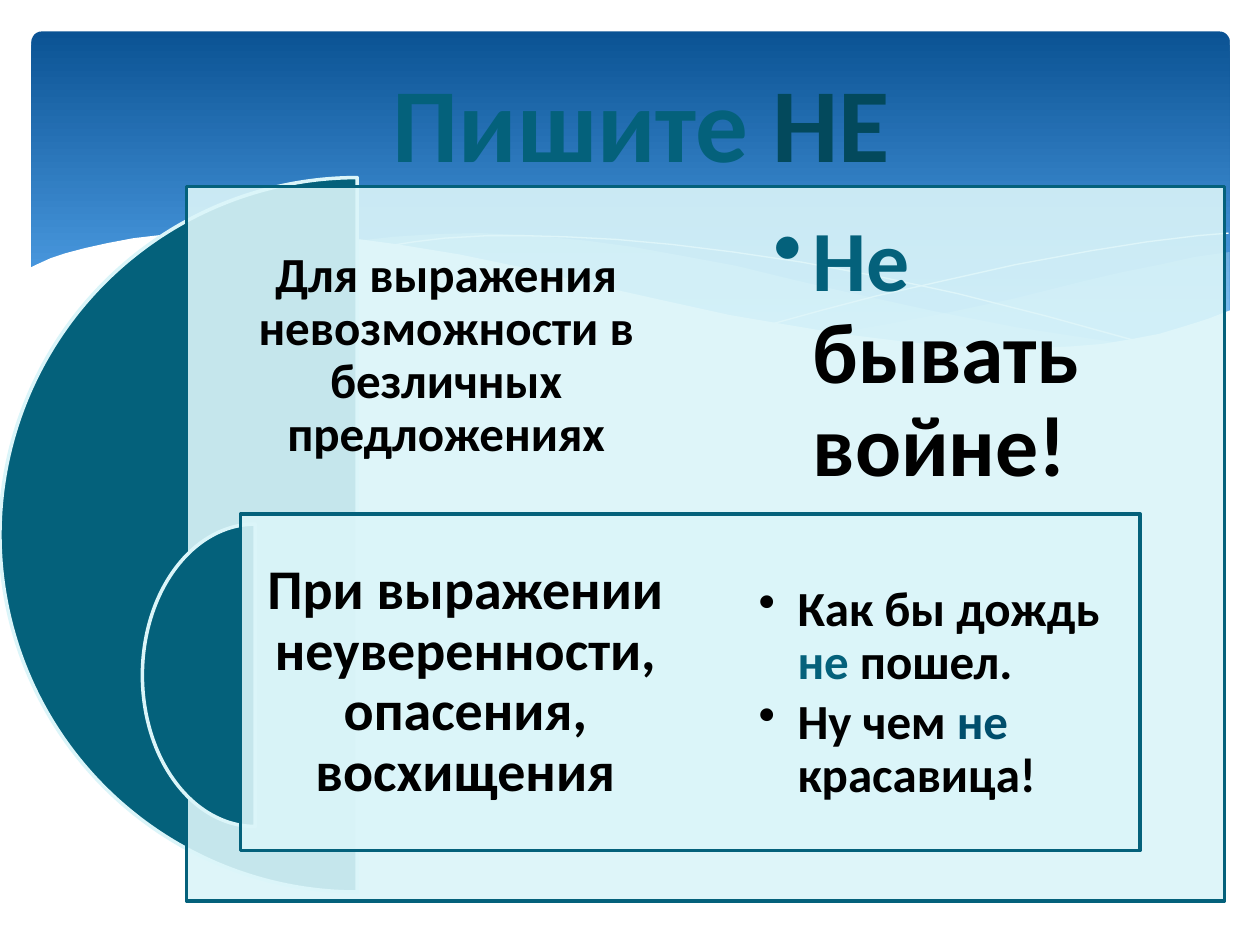
from dataclasses import dataclass
from typing import Optional

from lxml import etree
from pptx import Presentation
from pptx.dml.color import RGBColor
from pptx.enum.shapes import MSO_SHAPE
from pptx.enum.text import MSO_ANCHOR, MSO_AUTO_SIZE, PP_ALIGN
from pptx.oxml.ns import qn
from pptx.util import Inches, Pt

ROUND, RECT, PIE = MSO_SHAPE.ROUNDED_RECTANGLE, MSO_SHAPE.RECTANGLE, MSO_SHAPE.PIE
MIDDLE, NO_FIT = MSO_ANCHOR.MIDDLE, MSO_AUTO_SIZE.NONE
CENTER, LEFT = PP_ALIGN.CENTER, PP_ALIGN.LEFT
TEAL, ICE, WHITE, BLACK = "04617B", "DBF5F9", "FFFFFF", "000000"
FONT = "Calibri"


@dataclass
class Wave:
    points: list
    fill: Optional[str] = None
    alpha: int = 100


@dataclass
class Block:
    kind: int
    box: tuple
    fill: str
    line: str
    alpha: int = 100
    adjust: tuple = ()


@dataclass
class Label:
    box: tuple
    size: int
    inset: float
    paras: list
    bullet: bool = False


WAVES = [
    Wave([(9.76, 2), (9.48, 2.04), (9.21, 2.1), (8.91, 2.16), (8.61, 2.23),
          (8.05, 2.37), (7.53, 2.48), (7.06, 2.57), (6.61, 2.65), (6.91, 2.69),
          (7.19, 2.72), (7.45, 2.75), (7.81, 2.77), (8.14, 2.78), (8.54, 2.76),
          (8.81, 2.73), (9.05, 2.69), (9.28, 2.63), (9.49, 2.57), (9.76, 2.47)],
         ICE, 29),
    Wave([(8.93, 2.73), (8.66, 2.69), (8.07, 2.6), (7.41, 2.47), (6.68, 2.31),
          (6.29, 2.22), (5.84, 2.11), (5.41, 2.03), (5.02, 1.96), (4.65, 1.91),
          (4.2, 1.87), (3.8, 1.85), (3.44, 1.86), (3.13, 1.88), (2.86, 1.91),
          (3.23, 1.96), (3.62, 2.03), (4.04, 2.11), (4.49, 2.22), (4.91, 2.32),
          (5.3, 2.4), (5.84, 2.52), (6.34, 2.61), (6.8, 2.68), (7.22, 2.74),
          (7.61, 2.77), (7.96, 2.78), (8.28, 2.78), (8.57, 2.77)],
         ICE, 40),
    Wave([(3.09, 1.95), (3.28, 1.92), (3.53, 1.89), (3.87, 1.87), (4.16, 1.87),
          (4.5, 1.88), (4.89, 1.9), (5.33, 1.94), (5.82, 2), (6.36, 2.08),
          (6.95, 2.19), (7.6, 2.33), (8.31, 2.51), (9.07, 2.72)]),
    Wave([(6.13, 2.57), (6.53, 2.46), (6.95, 2.35), (7.48, 2.23), (8.06, 2.1),
          (8.66, 1.99), (9.1, 1.92), (9.51, 1.87), (9.75, 1.85)]),
    Wave([(9.77, 2.46), (9.59, 2.53), (9.4, 2.59), (9.2, 2.65), (8.99, 2.69),
          (8.75, 2.73), (8.5, 2.75), (8.09, 2.77), (7.78, 2.76), (7.44, 2.74),
          (7.08, 2.7), (6.68, 2.65), (6.26, 2.58), (5.79, 2.5), (5.29, 2.39),
          (4.75, 2.27), (4.18, 2.13), (3.65, 2.02), (3.16, 1.94), (2.71, 1.88),
          (2.3, 1.85), (1.93, 1.84), (1.61, 1.84), (1.32, 1.86), (1.06, 1.89),
          (0.85, 1.93), (0.67, 1.97), (0.52, 2.01), (0.4, 2.05), (0.29, 2.1),
          (0.23, 2.13), (0.23, 3.29), (9.77, 3.29)], WHITE),
]

BLOCKS = [
    Block(PIE, (0, 1.41, 5.67, 5.67), TEAL, ICE, adjust=(54, 162)),
    Block(RECT, (1.48, 1.48, 8.24, 5.67), ICE, TEAL, 90),
    Block(PIE, (1.13, 4.16, 1.79, 2.4), TEAL, ICE, adjust=(54, 162)),
    Block(RECT, (1.91, 4.08, 7.14, 2.67), ICE, TEAL, 90),
]

LABELS = [
    Label((1.48, 1.48, 4.12, 2.69), 28, 0.12,
          [[("Для выражения невозможности в безличных предложениях", BLACK)]]),
    Label((1.91, 4.08, 3.57, 2.67), 32, 0.13,
          [[("При выражении неуверенности, опасения, восхищения", BLACK)]]),
    Label((5.94, 1.48, 3.35, 2.69), 49, 0.2,
          [[("Не", TEAL), (" бывать войне!", BLACK)]], True),
    Label((5.82, 4.16, 3.35, 2.69), 28, 0.2,
          [[("Как бы дождь ", BLACK), ("не", TEAL), (" пошел.", BLACK)],
           [("Ну чем ", BLACK), ("не", "004E6C"), (" красавица!", BLACK)]], True),
]


def paint(color, value: str) -> None:
    color.rgb = RGBColor.from_string(value)


def fill_in(shape, value: str, alpha: int) -> None:
    shape.fill.solid()
    paint(shape.fill.fore_color, value)
    if alpha < 100:
        tone = shape.fill._xPr.find(qn("a:solidFill"))[0]
        etree.SubElement(tone, qn("a:alpha"), val=str(alpha * 1000))


def place(shape, box: tuple) -> None:
    for name, value in zip(("left", "top", "width", "height"), box):
        setattr(shape, name, Inches(value))


def draw_sky(shapes) -> None:
    sky = shapes.add_shape(ROUND, *map(Inches, (0.25, 0.25, 9.51, 2.7)))
    sky.shadow.inherit = False
    sky.adjustments[0] = 0.03
    sky.line.fill.background()
    sky.fill.gradient()
    sky.fill.gradient_angle = 270
    for stop, (spot, value) in zip(sky.fill.gradient_stops, ((0, "0B5394"), (0.9, "59AAF2"))):
        stop.position = spot
        paint(stop.color, value)


def draw_wave(shapes, wave: Wave) -> None:
    dots = [(Inches(x), Inches(y)) for x, y in wave.points]
    pen = shapes.build_freeform(*dots[0])
    pen.add_line_segments(dots[1:], close=wave.fill is not None)
    shape = pen.convert_to_shape()
    shape.shadow.inherit = False
    if wave.fill:
        fill_in(shape, wave.fill, wave.alpha)
        shape.line.fill.background()
    else:
        shape.fill.background()
        paint(shape.line.color, WHITE)
        shape.line.width = Pt(0)


def draw_block(shapes, block: Block) -> None:
    shape = shapes.add_shape(block.kind, *map(Inches, block.box))
    shape.shadow.inherit = False
    for index, angle in enumerate(block.adjust):
        shape.adjustments[index] = angle
    fill_in(shape, block.fill, block.alpha)
    paint(shape.line.color, block.line)
    shape.line.width = Pt(2)


def write(para, runs: list, size: int) -> None:
    for text, value in runs:
        run = para.add_run()
        run.text = text
        for name, trait in {"name": FONT, "size": Pt(size), "bold": True}.items():
            setattr(run.font, name, trait)
        paint(run.font.color, value)


def set_frame(frame, inset: float) -> None:
    traits = {"word_wrap": True, "auto_size": NO_FIT, "vertical_anchor": MIDDLE}
    traits.update({f"margin_{side}": Inches(inset) for side in ("left", "top", "right", "bottom")})
    for name, trait in traits.items():
        setattr(frame, name, trait)


def draw_label(shapes, label: Label) -> None:
    frame = shapes.add_textbox(*map(Inches, label.box)).text_frame
    set_frame(frame, label.inset)
    for index, runs in enumerate(label.paras):
        para = frame.add_paragraph() if index else frame.paragraphs[0]
        para.alignment = LEFT if label.bullet else CENTER
        para.line_spacing = 0.9
        para.space_after = Pt(round(label.size * (0.15 if label.bullet else 0.35)))
        if label.bullet:
            para.level = 1
            props = para._p.get_or_add_pPr()
            props.set("marL", str(Inches(0.31)))
            props.set("indent", str(-Inches(0.31)))
            etree.SubElement(props, qn("a:buChar"), char="•")
        write(para, runs, label.size)


def main() -> None:
    deck = Presentation()
    deck.slide_width, deck.slide_height = Inches(10), Inches(7.5)
    shapes = deck.slides.add_slide(deck.slide_layouts[5]).shapes
    draw_sky(shapes)
    for wave in WAVES:
        draw_wave(shapes, wave)
    for block in BLOCKS:
        draw_block(shapes, block)
    for label in LABELS:
        draw_label(shapes, label)
    title = shapes.title
    place(title, (2.49, 0.29, 5.2, 1.33))
    set_frame(title.text_frame, 0.05)
    para = title.text_frame.paragraphs[0]
    para.alignment = CENTER
    write(para, [("Пишите ", TEAL), ("НЕ", "03495C")], 60)
    shapes._spTree.append(title._element)
    deck.save("out.pptx")


if __name__ == "__main__":
    main()
